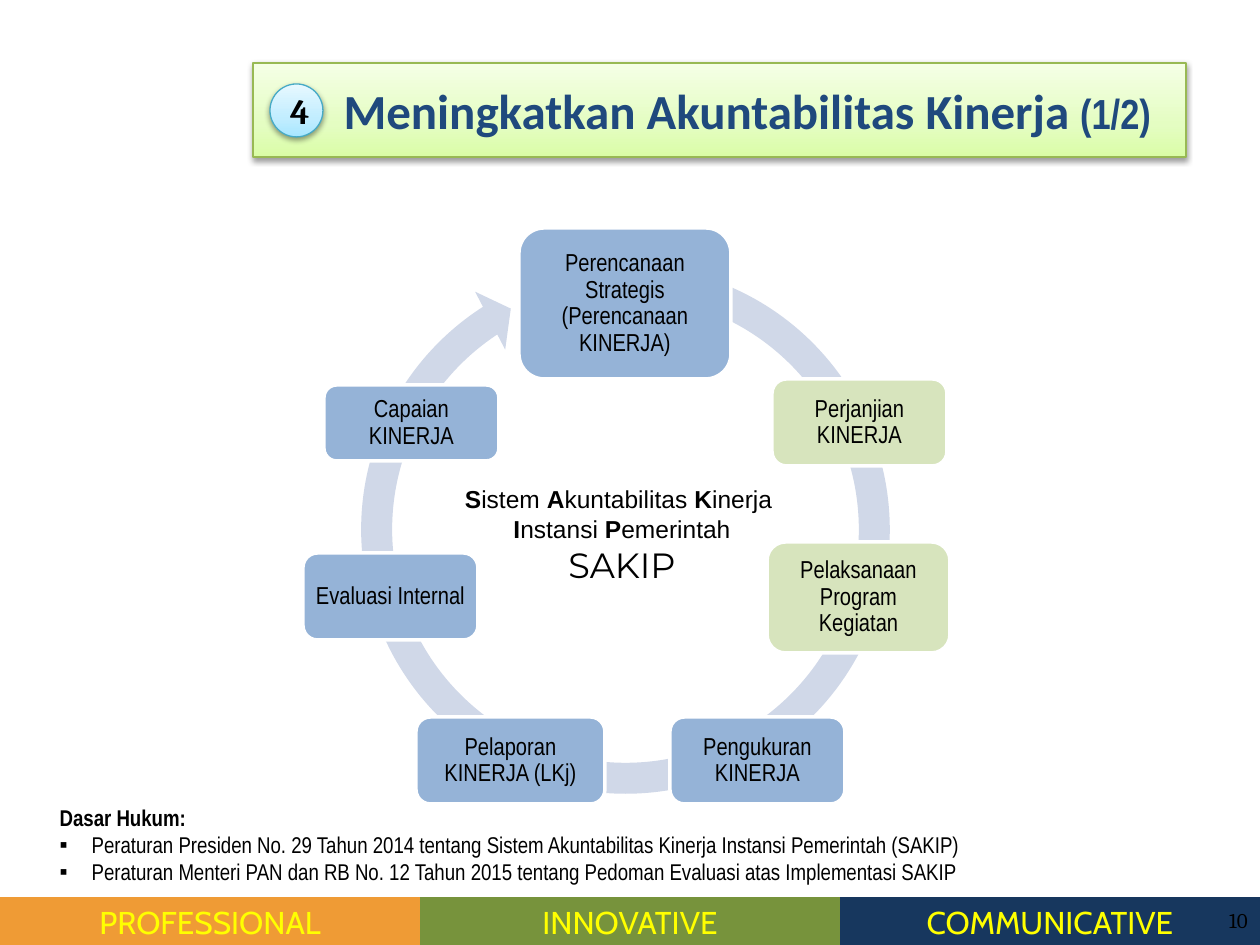
from copy import deepcopy
from lxml.etree import SubElement
from pptx import Presentation
from pptx.dml.color import RGBColor
from pptx.enum.shapes import MSO_SHAPE
from pptx.enum.text import MSO_ANCHOR, PP_ALIGN
from pptx.oxml.ns import qn
from pptx.util import Emu, Pt


def px(value):
    return Emu(round(value * 914400 / 126))


def write(frame, paragraphs, align, name, size, color="000000"):
    frame.word_wrap = True
    for index, parts in enumerate(paragraphs):
        paragraph = frame.paragraphs[0] if index == 0 else frame.add_paragraph()
        paragraph.alignment = align
        for words, changes in parts:
            run = paragraph.add_run()
            run.text = words
            run.font.color.rgb = RGBColor.from_string(color)
            look = {"name": name, "size": Pt(size), "bold": False} | changes
            for key, value in look.items():
                setattr(run.font, key, value)


BOLD = {"bold": True}
BLUE, GREEN = "95B3D7", "D7E4BD"

deck = Presentation()
deck.slide_width, deck.slide_height = px(1260), px(945)
slide = deck.slides.add_slide(deck.slide_layouts[6])
shapes = slide.shapes

values = [("PROFESSIONAL", "EF9B35"), ("INNOVATIVE", "77933C"), ("COMMUNICATIVE", "17375E")]
footer = shapes.add_table(1, len(values), px(0), px(897), px(1260), px(52)).table
footer.first_row = footer.horz_banding = False
footer._tbl.tblPr.find(qn("a:tableStyleId")).text = "{2D5ABB26-0587-4C30-8999-92F81FD0307C}"
for cell, (value, color) in zip(footer.rows[0].cells, values):
    cell.fill.solid()
    cell.fill.fore_color.rgb = RGBColor.from_string(color)
    cell.vertical_anchor = MSO_ANCHOR.MIDDLE
    write(cell.text_frame, [[(value, {})]], PP_ALIGN.CENTER, "Cabin", 18, "FFFF00")

heading = shapes.add_shape(MSO_SHAPE.RECTANGLE, px(253), px(63), px(933), px(94))
heading.text_frame.margin_left = px(68)
write(
    heading.text_frame,
    [[("Meningkatkan Akuntabilitas Kinerja ", BOLD),
      ("(1/2)", {"name": "Arial Narrow", "size": Pt(24), "bold": True})]],
    PP_ALIGN.CENTER, "Calibri", 28, "1F497D",
)
badge = shapes.add_shape(MSO_SHAPE.OVAL, px(270), px(84), px(53), px(53))
write(badge.text_frame, [[("4", BOLD)]], PP_ALIGN.CENTER, "Cambria", 20)

for panel, border, weight, colors in [
    (heading, "98B954", 1.5, ["DAFDA7", "E4FDC2", "F5FFE6"]),
    (badge, "46AAC5", 0.75, ["A7E6FF", "C1EDFF", "E7F8FF"]),
]:
    panel.text_frame.vertical_anchor = MSO_ANCHOR.MIDDLE
    panel.line.color.rgb = RGBColor.from_string(border)
    panel.line.width = Pt(weight)
    panel.fill.gradient()
    panel.fill.gradient_angle = 90
    properties = panel._element.spPr
    stops = properties.find(".//" + qn("a:gsLst"))
    stops.append(deepcopy(stops[0]))
    for stop, position, color in zip(panel.fill.gradient_stops, [0, 0.35, 1], colors):
        stop.position = position
        stop.color.rgb = RGBColor.from_string(color)
    panel.shadow.inherit = False
    shadow = SubElement(
        properties.find(qn("a:effectLst")), qn("a:outerShdw"),
        blurRad="40000", dist="20000", dir="5400000", rotWithShape="0",
    )
    shade = SubElement(shadow, qn("a:srgbClr"), val="000000")
    SubElement(shade, qn("a:alpha"), val="38000")

page = shapes.add_textbox(px(987), px(895), px(273), px(50)).text_frame
page.vertical_anchor = MSO_ANCHOR.MIDDLE
write(page, [[("10", {})]], PP_ALIGN.RIGHT, "Cambria", 12)

cycle = shapes.add_shape(MSO_SHAPE.CIRCULAR_ARROW, px(344), px(248), px(563), px(563))
for index, value in enumerate([0.055, 3.307, 142.229, 171.195, 0.058]):
    cycle.adjustments[index] = value
cycle.fill.solid()
cycle.fill.fore_color.rgb = RGBColor.from_string("D0D8E8")
cycle.line.fill.background()
cycle.shadow.inherit = False

for label, left, top, width, height, color in [
    ("Perencanaan Strategis (Perencanaan KINERJA)", 519, 228, 212, 151, BLUE),
    ("Perjanjian KINERJA", 772, 379, 175, 87, GREEN),
    ("Pelaksanaan Program Kegiatan", 767, 542, 183, 111, GREEN),
    ("Pengukuran KINERJA", 670, 717, 175, 87, BLUE),
    ("Pelaporan KINERJA (LKj)", 416, 717, 189, 87, BLUE),
    ("Evaluasi Internal", 303, 553, 175, 87, BLUE),
    ("Capaian KINERJA", 324, 385, 175, 76, BLUE),
]:
    stage = shapes.add_shape(
        MSO_SHAPE.ROUNDED_RECTANGLE, px(left), px(top), px(width), px(height)
    )
    stage.fill.solid()
    stage.fill.fore_color.rgb = RGBColor.from_string(color)
    stage.line.color.rgb = RGBColor.from_string("FFFFFF")
    stage.line.width = Pt(2)
    stage.shadow.inherit = False
    frame = stage.text_frame
    frame.vertical_anchor = MSO_ANCHOR.MIDDLE
    for side in ["left", "top", "right", "bottom"]:
        setattr(frame, f"margin_{side}", px(7))
    write(frame, [[(label, {})]], PP_ALIGN.CENTER, "Arial Narrow", 14)
    frame.paragraphs[0].line_spacing = 0.9

system = shapes.add_textbox(px(445), px(478), px(354), px(115)).text_frame
write(
    system,
    [
        [("S", BOLD), ("istem ", {}), ("A", BOLD), ("kuntabilitas ", {}),
         ("K", BOLD), ("inerja ", {})],
        [("I", BOLD), ("nstansi ", {}), ("P", BOLD), ("emerintah", {})],
        [("SAKIP", {"name": "Montserrat", "size": Pt(20)})],
    ],
    PP_ALIGN.CENTER, "Arial", 14,
)

legal = shapes.add_shape(MSO_SHAPE.ROUNDED_RECTANGLE, px(41), px(780), px(945), px(129))
legal.fill.background()
legal.line.fill.background()
legal.shadow.inherit = False
legal.text_frame.vertical_anchor = MSO_ANCHOR.MIDDLE
write(
    legal.text_frame,
    [
        [("Dasar Hukum:", BOLD)],
        [("Peraturan Presiden No. 29 Tahun 2014 tentang Sistem Akuntabilitas "
          "Kinerja Instansi Pemerintah (SAKIP)", {})],
        [("Peraturan Menteri PAN dan RB No. 12 Tahun 2015 tentang Pedoman "
          "Evaluasi atas Implementasi SAKIP", {})],
    ],
    PP_ALIGN.JUSTIFY, "Arial Narrow", 13,
)
for rule in legal.text_frame.paragraphs[1:]:
    indent = rule._p.get_or_add_pPr()
    indent.set("marL", str(px(32)))
    indent.set("indent", str(-px(32)))
    SubElement(indent, qn("a:buFont"), typeface="Arial")
    SubElement(indent, qn("a:buChar"), char="▪")

deck.save("out.pptx")
